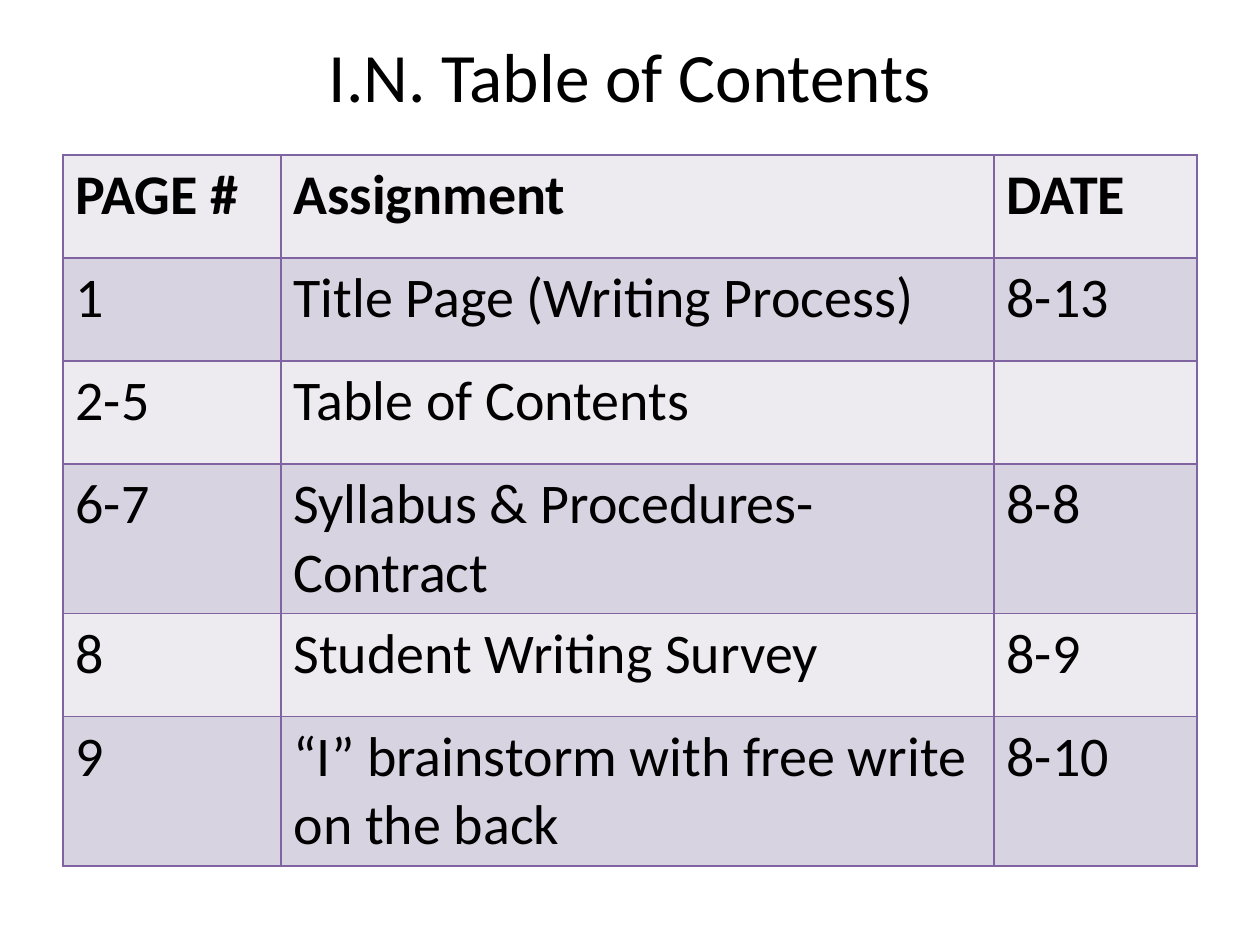
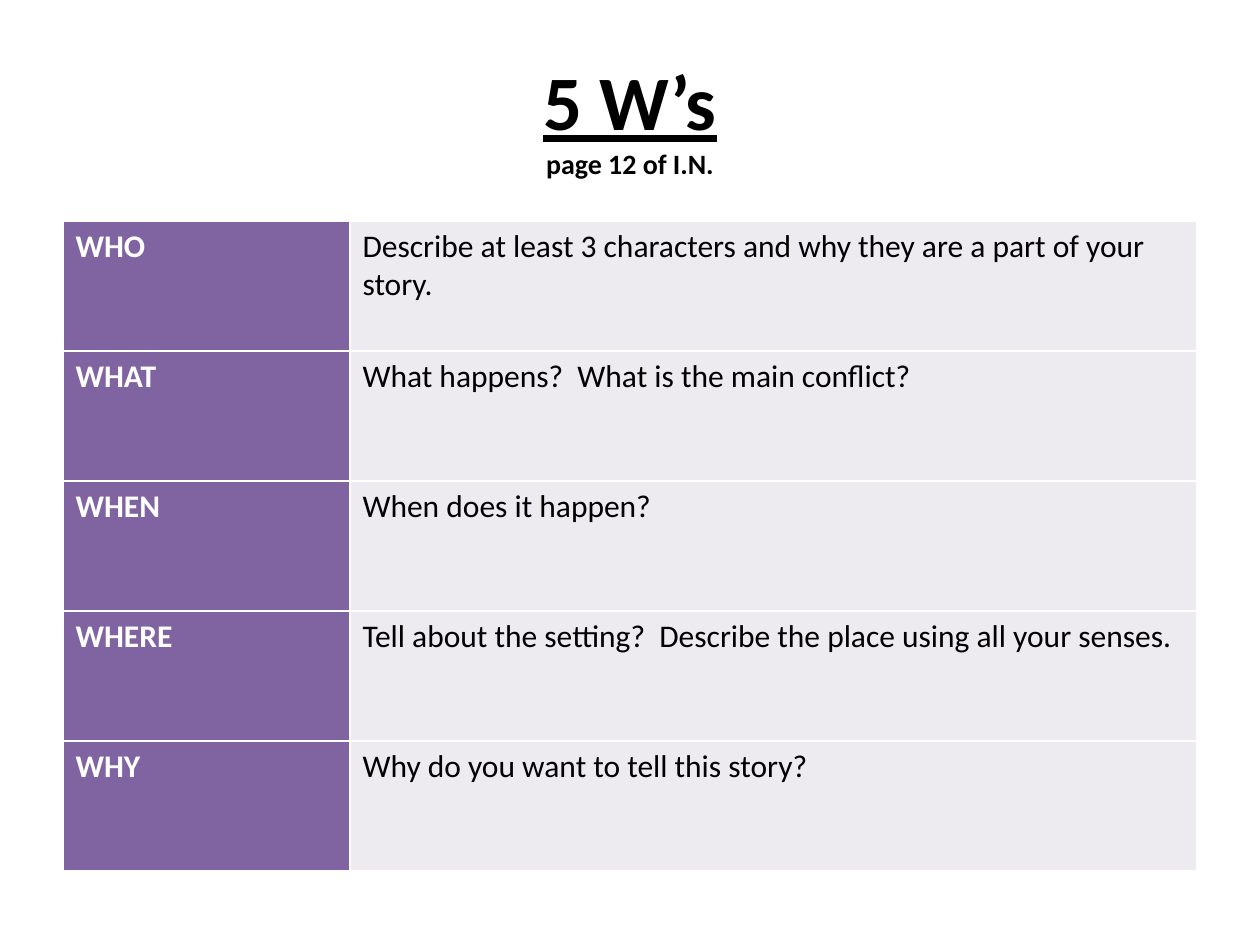
from lxml.etree import SubElement
from pptx import Presentation
from pptx.dml.color import RGBColor as RGB
from pptx.enum.text import MSO_ANCHOR as ANCHOR, MSO_AUTO_SIZE as AUTO, PP_ALIGN as ALIGN
from pptx.oxml.ns import qn
from pptx.util import Emu, Pt

# Content
CONTENTS = [
    ("PAGE #", "Assignment", "DATE"),
    ("1", "Title Page (Writing Process)", "8-13"),
    ("2-5", "Table of Contents", ""),
    ("6-7", "Syllabus & Procedures-Contract", "8-8"),
    ("8", "Student Writing Survey", "8-9"),
    ("9", "“I” brainstorm with free write on the back", "8-10"),
]
FIVE_WS = [
    ("WHO", "Describe at least 3 characters and why they are a part of your story."),
    ("WHAT", "What happens?  What is the main conflict?"),
    ("WHEN", "When does it happen?"),
    ("WHERE", "Tell about the setting?  Describe the place using all your senses."),
    ("WHY", "Why do you want to tell this story?"),
]

# Shared look
COLORS = {"ink": "000000", "white": "FFFFFF", "purple": "8064A2",
          "pale": "EDEAF0", "band": "D8D3E0"}
FONT = "Calibri"
LEFT, WIDTH = 63, 1134
TITLE_BOX = {"left": LEFT, "top": 38, "width": WIDTH, "height": 157}


def px(n):
    return Emu(round(n * 914400 / 126))


def rgb(name):
    return RGB.from_string(COLORS[name])


def style(font, size, color="ink", **fmt):
    font.color.rgb = rgb(color)
    for key, value in {"name": FONT, "size": Pt(size), **fmt}.items():
        setattr(font, key, value)


def add_title(s, lines, margin_bottom=6):
    """Each line is (text, size, font format)."""
    sp = s.shapes.title
    for key, value in TITLE_BOX.items():
        setattr(sp, key, px(value))
    tf = sp.text_frame
    frame = {"auto_size": AUTO.NONE, "word_wrap": True,
             "vertical_anchor": ANCHOR.MIDDLE, "margin_bottom": px(margin_bottom)}
    for key, value in frame.items():
        setattr(tf, key, value)
    for i, (text, size, fmt) in enumerate(lines):
        p = tf.add_paragraph() if i else tf.paragraphs[0]
        p.alignment = ALIGN.CENTER
        r = p.add_run()
        r.text = text
        style(r.font, size, **fmt)


def add_borders(cell, color):
    tc_pr = cell._tc.get_or_add_tcPr()
    for side in "LRTB":
        ln = SubElement(tc_pr, qn(f"a:ln{side}"), w=str(Pt(1)))
        fill = SubElement(ln, qn("a:solidFill"))
        SubElement(fill, qn("a:srgbClr"), val=COLORS[color])


def add_grid(s, rows, top, col_widths, row_height, size, border, look):
    """look(row, col) gives the fill, text colour and bold of a cell."""
    table = s.shapes.add_table(len(rows), len(col_widths), px(LEFT), px(top),
                               px(WIDTH), px(row_height * len(rows))).table
    table.first_row = table.horz_banding = False
    for col, width in zip(table.columns, col_widths):
        col.width = px(width)
    for i, row in enumerate(rows):
        table.rows[i].height = px(row_height)
        for j, text in enumerate(row):
            cell = table.cell(i, j)
            fill, color, bold = look(i, j)
            add_borders(cell, border)
            cell.fill.solid()
            cell.fill.fore_color.rgb = rgb(fill)
            p = cell.text_frame.paragraphs[0]
            if text:
                style(p.add_run().font, size, color, bold=bold)
                p.runs[0].text = text
            else:
                p.font.size = Pt(size)


def contents_look(row, col):
    return ("band" if row % 2 else "pale"), "ink", row == 0


def five_ws_look(row, col):
    return ("pale", "ink", False) if col else ("purple", "white", True)


def main():
    prs = Presentation()
    prs.slide_width, prs.slide_height = px(1260), px(945)
    layout = prs.slide_layouts[5]

    # Table of contents: the title sits in the upper half of its box
    s = prs.slides.add_slide(layout)
    add_title(s, [("I.N. Table of Contents", 39.6, {})], margin_bottom=90)
    add_grid(s, CONTENTS, 155, (218, 713, 203), 103, 32, "purple", contents_look)

    # 5 W's
    s = prs.slides.add_slide(layout)
    add_title(s, [("5 W’s", 44, {"bold": True, "underline": True}),
                  ("page 12 of I.N.", 16, {"bold": True})])
    add_grid(s, FIVE_WS, 221, (287, 847), 130, 18, "white", five_ws_look)

    prs.save("out.pptx")


if __name__ == "__main__":
    main()
